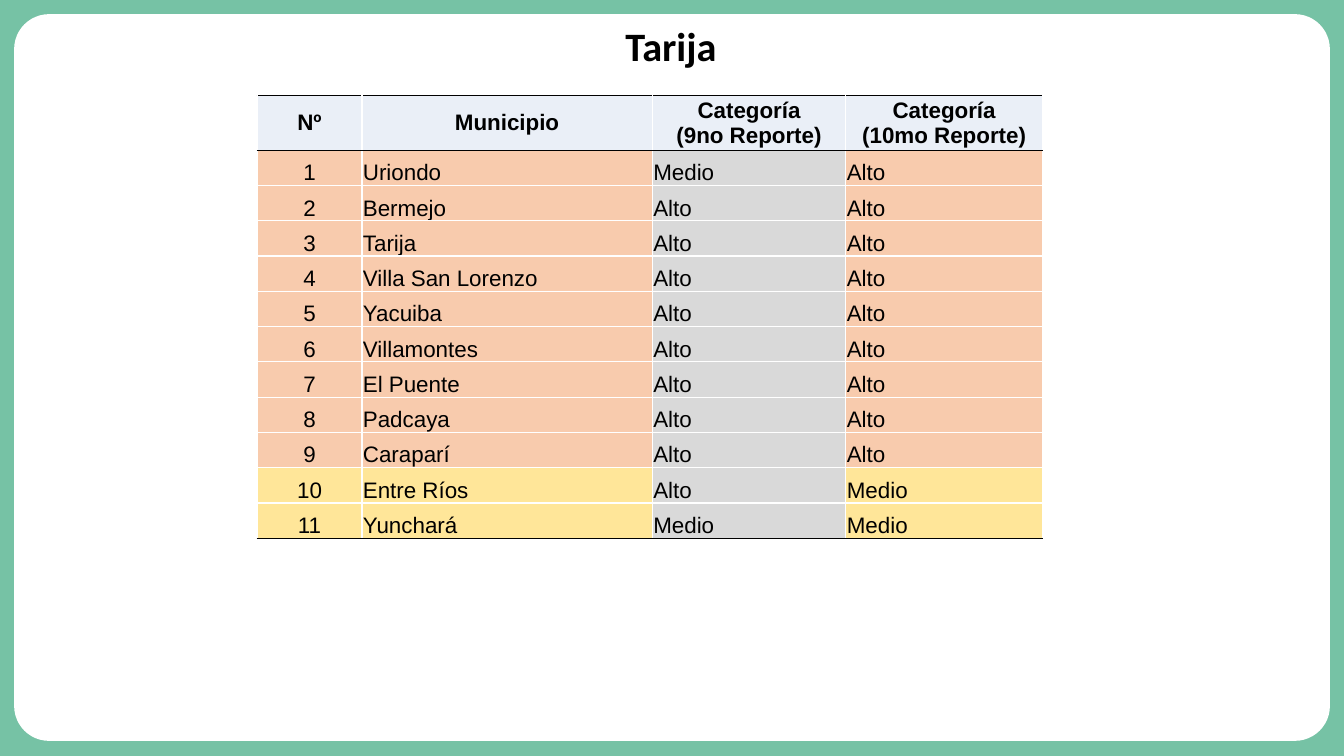
"""Build the Tarija slide: municipalities by risk category in two reports."""
from dataclasses import dataclass

from lxml import etree
from pptx import Presentation
from pptx.dml.color import RGBColor
from pptx.enum import shapes, text
from pptx.oxml import ns
from pptx.util import Inches, Pt

COLORS = {
    "frame": "76C2A5",
    "white": "FFFFFF",
    "black": "000000",
    "header": "EAEFF7",
    "previous": "D9D9D9",
    "Alto": "F8CBAD",
    "Medio": "FFE699",
}
HEADERS = ("Nº", "Municipio", "Categoría\n(9no Reporte)", "Categoría\n(10mo Reporte)")
COLUMN_WIDTHS = (1.04, 2.88, 1.92, 1.95)
HEADER_HEIGHT, ROW_HEIGHT = 0.54, 0.35


@dataclass(frozen=True)
class Municipality:
    name: str
    previous: str
    current: str


MUNICIPALITIES = (
    Municipality("Uriondo", "Medio", "Alto"),
    Municipality("Bermejo", "Alto", "Alto"),
    Municipality("Tarija", "Alto", "Alto"),
    Municipality("Villa San Lorenzo", "Alto", "Alto"),
    Municipality("Yacuiba", "Alto", "Alto"),
    Municipality("Villamontes", "Alto", "Alto"),
    Municipality("El Puente", "Alto", "Alto"),
    Municipality("Padcaya", "Alto", "Alto"),
    Municipality("Caraparí", "Alto", "Alto"),
    Municipality("Entre Ríos", "Alto", "Medio"),
    Municipality("Yunchará", "Medio", "Medio"),
)


def color(name: str) -> RGBColor:
    return RGBColor.from_string(COLORS[name])


def style_text(frame, font_name: str, size: float, bold: bool, centered: bool) -> None:
    for para in frame.paragraphs:
        para.alignment = text.PP_ALIGN.CENTER if centered else text.PP_ALIGN.LEFT
        para.font.name = font_name
        para.font.size = Pt(size)
        para.font.bold = bold
        para.font.color.rgb = color("black")


def add_borders(cell, top: str, bottom: str) -> None:
    properties = cell._tc.get_or_add_tcPr()
    for side, name in (("L", "white"), ("R", "white"), ("T", top), ("B", bottom)):
        line = etree.SubElement(properties, ns.qn(f"a:ln{side}"), w=str(Pt(1)))
        fill = etree.SubElement(line, ns.qn("a:solidFill"))
        etree.SubElement(fill, ns.qn("a:srgbClr"), val=COLORS[name])


def fill_cell(cell, words: str, fill: str, is_header: bool, centered: bool) -> None:
    cell.text = words
    margin = Inches(0 if centered else 0.01)
    cell.margin_left = cell.margin_top = cell.margin_right = margin
    cell.margin_bottom = 0
    cell.vertical_anchor = text.MSO_ANCHOR.MIDDLE if is_header else text.MSO_ANCHOR.BOTTOM
    cell.fill.solid()
    cell.fill.fore_color.rgb = color(fill)
    style_text(cell.text_frame, "Arial", 16, is_header, centered)


def add_title(page) -> None:
    title = page.shapes.title
    title.left, title.top = Inches(0.52), Inches(0.21)
    title.width, title.height = Inches(12.27), Inches(0.55)
    frame = title.text_frame
    frame.text = "Tarija"
    frame.auto_size = text.MSO_AUTO_SIZE.NONE
    frame.vertical_anchor = text.MSO_ANCHOR.MIDDLE
    frame.paragraphs[0].line_spacing = 0.9
    style_text(frame, "Calibri", 28.8, True, True)


def add_panel(page) -> None:
    panel = page.shapes.add_shape(
        shapes.MSO_SHAPE.ROUNDED_RECTANGLE,
        Inches(0.14), Inches(0.14), Inches(13.05), Inches(7.21),
    )
    panel.adjustments[0] = 0.048
    panel.shadow.inherit = False
    panel.fill.solid()
    panel.fill.fore_color.rgb = color("white")
    panel.line.fill.background()
    page.shapes.title.element.addprevious(panel.element)


def add_category_table(page) -> None:
    last = len(MUNICIPALITIES)
    table = page.shapes.add_table(
        last + 1, len(HEADERS), Inches(2.55), Inches(0.95),
        Inches(sum(COLUMN_WIDTHS)), Inches(HEADER_HEIGHT + last * ROW_HEIGHT),
    ).table
    table.first_row = table.horz_banding = False
    for column, width in zip(table.columns, COLUMN_WIDTHS):
        column.width = Inches(width)
    for index, row in enumerate(table.rows):
        is_header = index == 0
        row.height = Inches(HEADER_HEIGHT if is_header else ROW_HEIGHT)
        if is_header:
            words, fills = HEADERS, ("header",) * len(HEADERS)
        else:
            place = MUNICIPALITIES[index - 1]
            words = (str(index), place.name, place.previous, place.current)
            fills = (place.current, place.current, "previous", place.current)
        top = "black" if index <= 1 else "white"
        bottom = "black" if index in (0, last) else "white"
        for position, cell in enumerate(row.cells):
            add_borders(cell, top, bottom)
            fill_cell(cell, words[position], fills[position], is_header,
                      is_header or position == 0)


def main() -> None:
    deck = Presentation()
    deck.slide_width, deck.slide_height = Inches(13.33), Inches(7.5)
    page = deck.slides.add_slide(deck.slide_layouts.get_by_name("Title Only"))
    page.background.fill.solid()
    page.background.fill.fore_color.rgb = color("frame")
    add_title(page)
    add_panel(page)
    add_category_table(page)
    deck.save("out.pptx")


if __name__ == "__main__":
    main()
